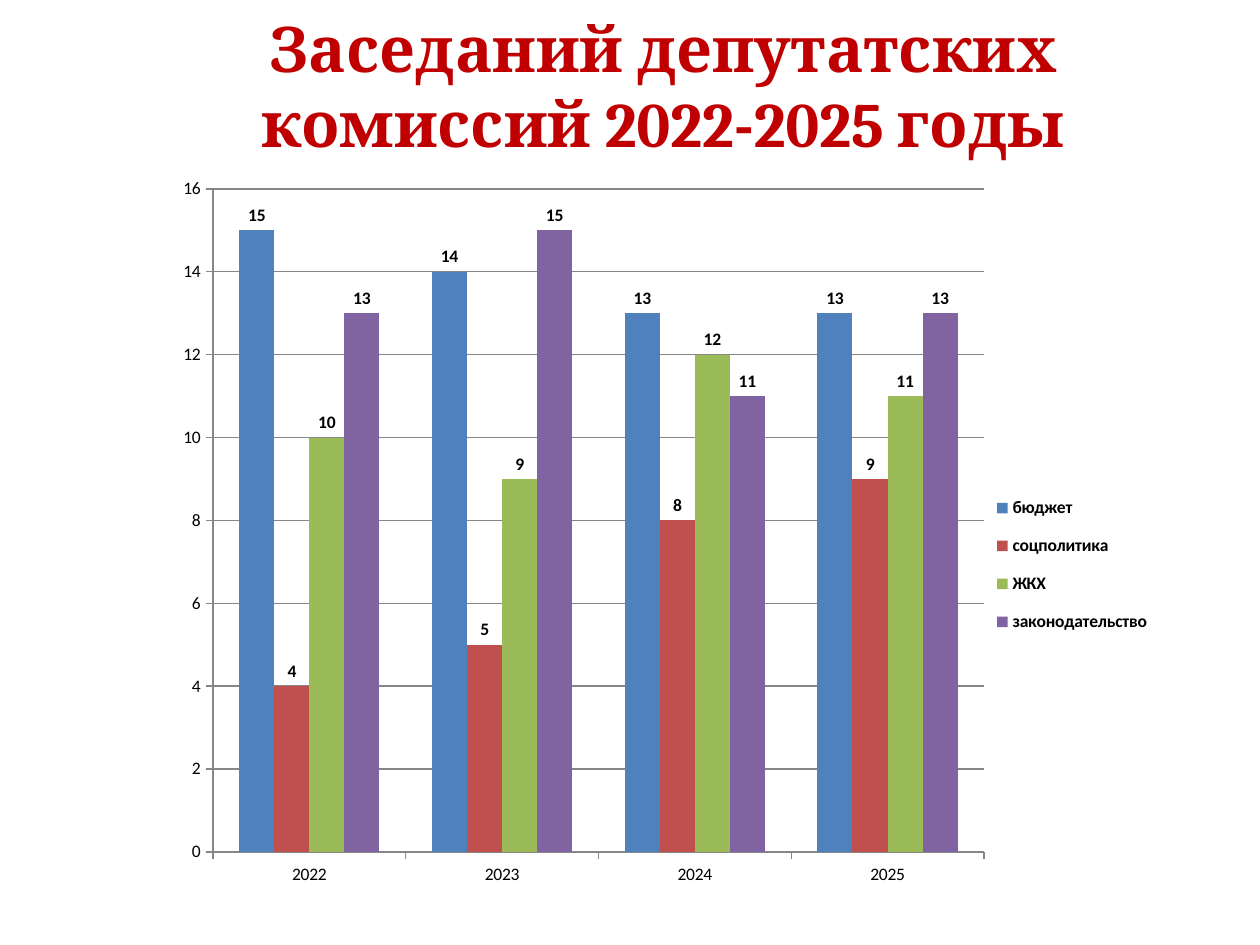
from lxml.etree import SubElement
from pptx import Presentation
from pptx.chart.data import CategoryChartData
from pptx.dml.color import RGBColor
from pptx.enum.chart import XL_CHART_TYPE, XL_LABEL_POSITION, XL_LEGEND_POSITION, XL_TICK_MARK
from pptx.enum.text import MSO_ANCHOR, MSO_AUTO_SIZE, PP_ALIGN
from pptx.oxml.ns import qn
from pptx.util import Emu, Pt

SCALE = 914400 / 126
YEARS = ["2022", "2023", "2024", "2025"]
COMMISSIONS = [
    ("бюджет", [15, 14, 13, 13], "4F81BD"),
    ("соцполитика", [4, 5, 8, 9], "C0504D"),
    ("ЖКХ", [10, 9, 12, 11], "9BBB59"),
    ("законодательство", [13, 15, 11, 13], "8064A2"),
]


def px(length):
    return Emu(round(length * SCALE))


def color(hex_string):
    return RGBColor.from_string(hex_string)


def place_part(element, position, part_box, chart_box, inner=False):
    for existing in element.findall(qn("c:layout")):
        element.remove(existing)
    layout = SubElement(element, qn("c:layout"))
    element.insert(position, layout)
    manual = SubElement(layout, qn("c:manualLayout"))
    left, top, width, height = part_box
    chart_width, chart_height = chart_box[2:]
    settings = [("layoutTarget", "inner")] if inner else []
    settings += [
        ("xMode", "edge"),
        ("yMode", "edge"),
        ("x", left / chart_width),
        ("y", top / chart_height),
        ("w", width / chart_width),
        ("h", height / chart_height),
    ]
    for name, value in settings:
        SubElement(manual, qn(f"c:{name}")).set("val", str(value))


def fill_title(page, box):
    title = page.shapes.title
    title.left, title.top, title.width, title.height = map(px, box)
    frame = title.text_frame
    frame.word_wrap = True
    frame.auto_size = MSO_AUTO_SIZE.NONE
    frame.vertical_anchor = MSO_ANCHOR.MIDDLE
    para = frame.paragraphs[0]
    para.alignment = PP_ALIGN.CENTER
    span = para.add_run()
    span.text = "Заседаний депутатских комиссий 2022-2025 годы"
    span.font.name = "Cambria"
    span.font.size = Pt(36)
    span.font.bold = True
    span.font.color.rgb = color("C00000")


def format_axis(axis):
    axis.major_tick_mark = XL_TICK_MARK.OUTSIDE
    axis.minor_tick_mark = XL_TICK_MARK.NONE
    axis.format.line.color.rgb = color("868686")
    axis.format.line.width = Pt(0.75)


def add_meetings_chart(page, box):
    data = CategoryChartData(number_format="General")
    data.categories = YEARS
    for name, values, _ in COMMISSIONS:
        data.add_series(name, values)
    chart = page.shapes.add_chart(
        XL_CHART_TYPE.COLUMN_CLUSTERED, *map(px, box), data
    ).chart
    chart.has_title = False
    chart.font.name = "Calibri"
    chart.font.size = Pt(10)
    chart.font.color.rgb = color("000000")

    format_axis(chart.category_axis)
    value_axis = chart.value_axis
    format_axis(value_axis)
    value_axis.minimum_scale = 0
    value_axis.maximum_scale = 16
    value_axis.major_unit = 2
    value_axis.has_major_gridlines = True
    value_axis.major_gridlines.format.line.color.rgb = color("868686")
    value_axis.major_gridlines.format.line.width = Pt(0.75)

    plot = chart.plots[0]
    plot.gap_width = 150
    plot.overlap = 0
    plot.vary_by_categories = False
    for series, (_, _, shade) in zip(plot.series, COMMISSIONS):
        series.format.fill.solid()
        series.format.fill.fore_color.rgb = color(shade)
        labels = series.data_labels
        labels.show_value = True
        labels.position = XL_LABEL_POSITION.OUTSIDE_END
        labels.font.bold = True

    chart.has_legend = True
    legend = chart.legend
    legend.position = XL_LEGEND_POSITION.RIGHT
    legend.include_in_layout = False
    legend.font.bold = True

    root = chart.element if hasattr(chart, "element") else chart._chartSpace
    plot_area = root.find(".//" + qn("c:plotArea"))
    legend_area = root.find(".//" + qn("c:legend"))
    place_part(plot_area, 0, (49, 24, 771, 663), box, inner=True)
    place_part(legend_area, 1, (826, 315, 164, 170), box)


def main():
    deck = Presentation()
    deck.slide_width, deck.slide_height = px(1260), px(945)
    page = deck.slides.add_slide(deck.slide_layouts[5])
    page.background.fill.solid()
    page.background.fill.fore_color.rgb = color("FFFFFF")
    add_meetings_chart(page, (164, 165, 1012, 735))
    fill_title(page, (123, 26, 1081, 118))
    deck.save("out.pptx")


if __name__ == "__main__":
    main()
